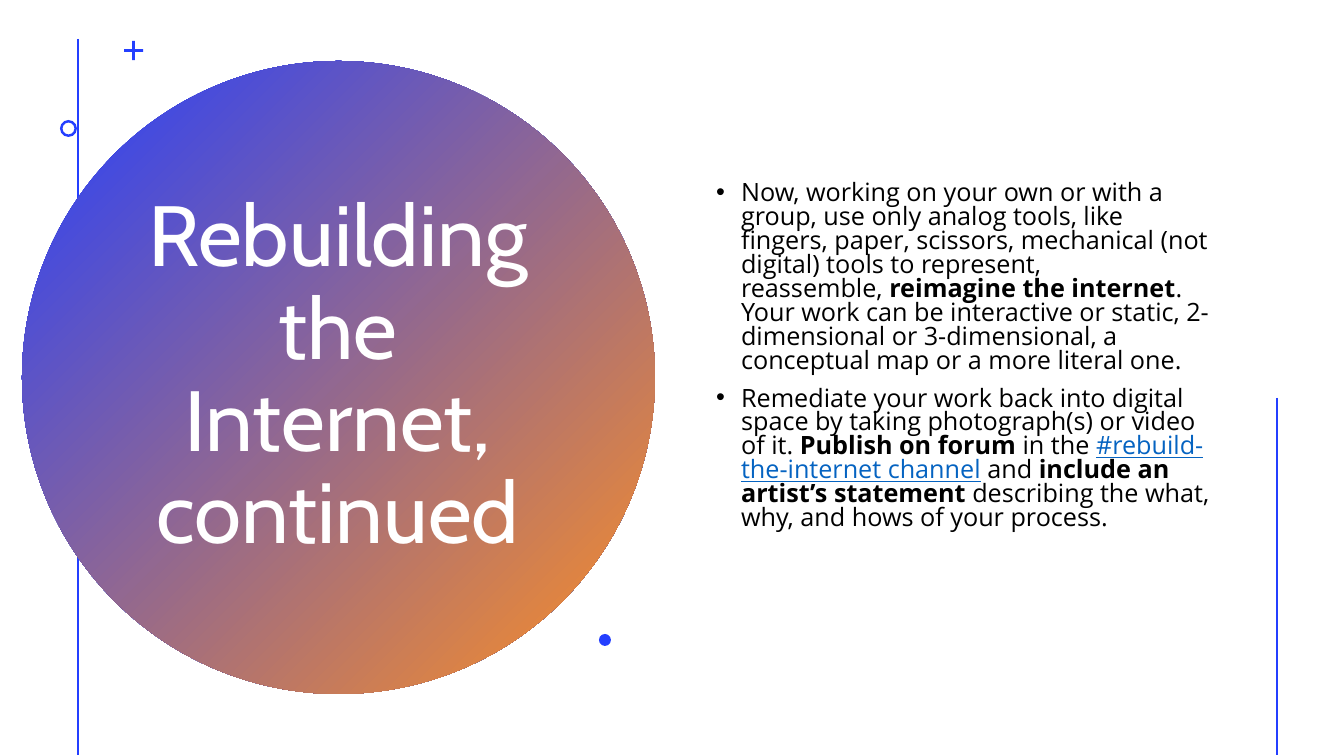
from lxml import etree
from pptx import Presentation
from pptx.dml.color import RGBColor
from pptx.enum.shapes import MSO_CONNECTOR, MSO_SHAPE
from pptx.enum.text import MSO_ANCHOR, MSO_AUTO_SIZE, PP_ALIGN
from pptx.oxml.ns import qn
from pptx.util import Emu, Pt

STRAIGHT = MSO_CONNECTOR.STRAIGHT
OVAL, DONUT, CROSS = MSO_SHAPE.OVAL, MSO_SHAPE.DONUT, MSO_SHAPE.CROSS
MIDDLE = MSO_ANCHOR.MIDDLE
NO_AUTOFIT = MSO_AUTO_SIZE.NONE
CENTER, LEFT = PP_ALIGN.CENTER, PP_ALIGN.LEFT

EMU_PER_PX = 914400 / 100.8
BLUE, ORANGE, LINK_BLUE = "243FFF", "FF9022", "0563C1"
BLACK, WHITE = "000000", "FFFFFF"
NO_BREAK_SPACE = chr(160)

# Each bullet is a list of (text, style) runs.
BULLETS = [
    [
        ("Now, working on your own or with a group, use only analog tools, like "
         "fingers, paper, scissors, mechanical (not digital) tools to represent, "
         "reassemble," + NO_BREAK_SPACE, "plain"),
        ("reimagine the internet", "bold"),
        (". Your work can be interactive or static, 2-dimensional or "
         "3-dimensional, a conceptual map or a more literal one.", "plain"),
    ],
    [
        ("Remediate your work back into digital space by taking photograph(s) "
         "or video of it. ", "plain"),
        ("Publish on forum ", "bold"),
        ("in the ", "plain"),
        ("#rebuild-the-internet channel", "link"),
        (" and ", "plain"),
        ("include an artist’s statement", "bold"),
        (" describing the what, why, and hows of your process.", "plain"),
    ],
]


def px(value):
    return Emu(round(value * EMU_PER_PX))


def color(hex_string):
    return RGBColor.from_string(hex_string)


def place(shape, left, top, width, height):
    shape.left, shape.top = px(left), px(top)
    shape.width, shape.height = px(width), px(height)


def add_vertical_line(slide, x, top, bottom):
    line = slide.shapes.add_connector(STRAIGHT, px(x), px(top), px(x), px(bottom))
    line.line.color.rgb = color(BLUE)
    line.line.width = Pt(2)
    etree.SubElement(line.element.spPr, qn("a:effectLst"))
    return line


def add_ornament(slide, kind, left, top, size, adjustment=None):
    """Add a square, outline-free blue preset shape."""
    shape = slide.shapes.add_shape(kind, px(left), px(top), px(size), px(size))
    shape.shadow.inherit = False
    shape.fill.solid()
    shape.fill.fore_color.rgb = color(BLUE)
    shape.line.fill.background()
    if adjustment is not None:
        shape.adjustments[0] = adjustment
    return shape


def add_gradient_circle(slide, left, top, size):
    circle = add_ornament(slide, OVAL, left, top, size)
    circle.fill.gradient()
    circle.fill.gradient_angle = 315
    for stop, position, shade in zip(circle.fill.gradient_stops, (0, 1), (BLUE, ORANGE)):
        stop.position = position
        stop.color.rgb = color(shade)
    return circle


def prepare_frame(placeholder):
    frame = placeholder.text_frame
    frame.word_wrap = True
    frame.auto_size = NO_AUTOFIT
    frame.vertical_anchor = MIDDLE
    return frame


def format_paragraph(paragraph, font_name, size, hex_string, alignment, spacing):
    paragraph.alignment = alignment
    paragraph.line_spacing = spacing
    paragraph.space_before = Pt(0)
    paragraph.font.name = font_name
    paragraph.font.size = Pt(size)
    paragraph.font.color.rgb = color(hex_string)


def fill_title(title):
    place(title, 137, 142, 402, 471)
    paragraph = prepare_frame(title).paragraphs[0]
    paragraph.text = "Rebuilding the Internet, continued"
    format_paragraph(paragraph, "Cabin", 61, WHITE, CENTER, 0.9)


def add_bullet(paragraph):
    properties = paragraph._p.get_or_add_pPr()
    properties.set("marL", str(px(25)))
    properties.set("indent", str(-px(25)))
    etree.SubElement(properties, qn("a:buFont"), typeface="Arial")
    etree.SubElement(properties, qn("a:buChar"), char="•")


def add_styled_run(paragraph, text, style):
    run = paragraph.add_run()
    run.text = text
    if style == "bold":
        run.font.bold = True
    elif style == "link":
        run.font.underline = True
        run.font.color.rgb = color(LINK_BLUE)


def fill_body(body):
    place(body, 706, 42, 516, 630)
    frame = prepare_frame(body)
    for index, runs in enumerate(BULLETS):
        paragraph = frame.add_paragraph() if index else frame.paragraphs[0]
        add_bullet(paragraph)
        format_paragraph(paragraph, "Open Sans", 18, BLACK, LEFT, 0.79)
        if index:
            paragraph.space_before = Pt(10)
        for text, style in runs:
            add_styled_run(paragraph, text, style)


def main():
    presentation = Presentation()
    presentation.slide_width, presentation.slide_height = px(1344), px(756)
    slide = presentation.slides.add_slide(presentation.slide_layouts[1])
    title, body = slide.placeholders

    left_line = add_vertical_line(slide, 78, 39, 755)
    circle = add_gradient_circle(slide, 22, 61, 633)
    for backdrop in (left_line, circle):
        title.element.addprevious(backdrop.element)

    fill_title(title)
    fill_body(body)
    add_ornament(slide, CROSS, 124, 41, 19, 0.43)
    add_ornament(slide, DONUT, 60, 120, 17, 0.15)
    add_ornament(slide, OVAL, 599, 634, 12)
    add_vertical_line(slide, 1277, 398, 755)

    presentation.save("out.pptx")


if __name__ == "__main__":
    main()
